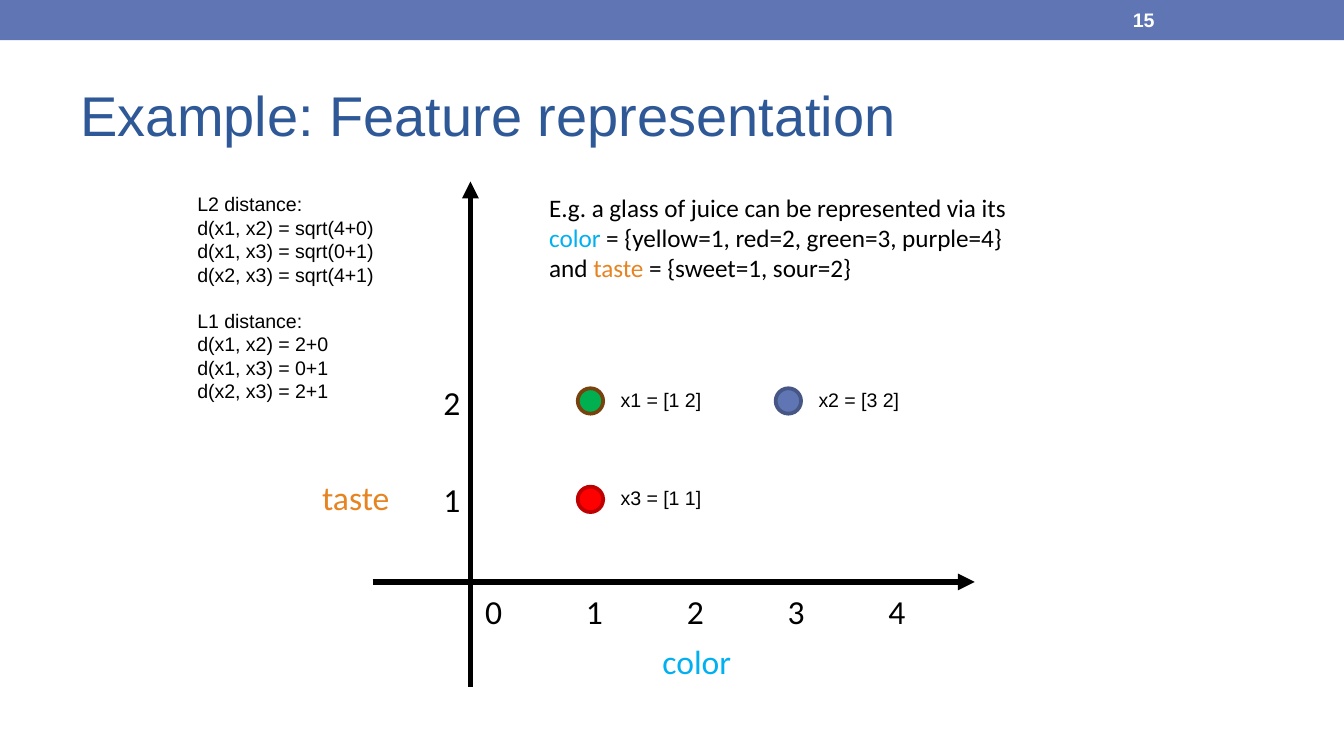
from lxml import etree
from pptx import Presentation
from pptx.dml.color import RGBColor
from pptx.enum.shapes import MSO_CONNECTOR, MSO_SHAPE
from pptx.enum.text import MSO_ANCHOR, PP_ALIGN
from pptx.oxml.ns import qn
from pptx.util import Cm, Pt

STRAIGHT = MSO_CONNECTOR.STRAIGHT
RECTANGLE, OVAL = MSO_SHAPE.RECTANGLE, MSO_SHAPE.OVAL
LEFT, TOP, MIDDLE = PP_ALIGN.LEFT, MSO_ANCHOR.TOP, MSO_ANCHOR.MIDDLE

THEME = {
    "ink": "000000", "bar": "6076B4", "title": "2F5897", "white": "FFFFFF",
    "color": "00B0F0", "taste": "E68422",
    "heading": {"name": "Arial", "size": Pt(30)},
    "axis": {"name": "Calibri", "size": Pt(18)},
    "body": {"name": "Calibri", "size": Pt(13.5)},
    "small": {"name": "Arial", "size": Pt(10.5)},
    "number": {"name": "Arial", "size": Pt(10.5), "bold": True},
}

# Content: a paragraph is a list of (text, colour key) runs
TITLE = "Example: Feature representation"
PAGE = "15"
INTRO = [
    ("E.g. a glass of juice can be represented via its ", "ink"),
    ("color", "color"),
    (" = {yellow=1, red=2, green=3, purple=4} and ", "ink"),
    ("taste", "taste"),
    (" = {sweet=1, sour=2}", "ink"),
]
DISTANCES = {
    "L2 distance:": ["d(x1, x2) = sqrt(4+0)", "d(x1, x3) = sqrt(0+1)",
                     "d(x2, x3) = sqrt(4+1)"],
    "L1 distance:": ["d(x1, x2) = 2+0", "d(x1, x3) = 0+1", "d(x2, x3) = 2+1"],
}
COLOR_TICKS = ["0", "1", "2", "3", "4"]
TASTE_TICKS = ["2", "1"]
SAMPLES = [  # name, color value, taste value, fill, outline
    ("x2", 3, 2, "6076B4", "475785"),
    ("x1", 1, 2, "00B050", "77420D"),
    ("x3", 1, 1, "FF0000", "C00000"),
]

# Geometry in centimetres
SLIDE_W, SLIDE_H = 25.4, 14.29
AXES = [(7.04, 11, 18.42, 11), (8.89, 12.98, 8.89, 3.43)]
FIRST_X, FIRST_Y = 11.16, 9.44
UNIT_X, UNIT_Y = 1.87, 1.86
DOT = 0.48
TICK_GAP = 1.905

prs = Presentation()
prs.slide_width, prs.slide_height = Cm(SLIDE_W), Cm(SLIDE_H)
slide = prs.slides.add_slide(prs.slide_layouts[5])


def rgb(value):
    return RGBColor.from_string(value)


def write(frame, paragraphs, style, anchor=TOP):
    frame.vertical_anchor = anchor
    for index, runs in enumerate(paragraphs):
        paragraph = frame.paragraphs[0] if index == 0 else frame.add_paragraph()
        paragraph.alignment = LEFT
        for text, color in runs:
            run = paragraph.add_run()
            run.text = text
            for key, value in THEME[style].items():
                setattr(run.font, key, value)
            run.font.color.rgb = rgb(THEME[color])


def add_text(box, paragraphs, style, wrap=False, anchor=TOP):
    frame = slide.shapes.add_textbox(*map(Cm, box)).text_frame
    frame.word_wrap = wrap
    write(frame, paragraphs, style, anchor)
    return frame


def add_filled(kind, box, fill):
    shape = slide.shapes.add_shape(kind, *map(Cm, box))
    shape.shadow.inherit = False
    shape.fill.solid()
    shape.fill.fore_color.rgb = rgb(fill)
    return shape


# Top bar with page number, and title
bar = add_filled(RECTANGLE, (0, 0, SLIDE_W, 0.76), THEME["bar"])
bar.line.fill.background()
add_text((21.16, 0.03, 2.97, 0.69), [[(PAGE, "white")]], "number", True, MIDDLE)

title = slide.shapes.title
title_box = {"left": 1.27, "top": 1.12, "width": 22.86, "height": 2.06}
for side, length in title_box.items():
    setattr(title, side, Cm(length))
write(title.text_frame, [[(TITLE, "title")]], "heading", MIDDLE)

# Axes with arrowheads
for ends in AXES:
    axis = slide.shapes.add_connector(STRAIGHT, *map(Cm, ends))
    axis.line.width = Pt(3)
    axis.line.color.rgb = rgb(THEME["ink"])
    etree.SubElement(axis.line._get_or_add_ln(), qn("a:tailEnd"), type="triangle")
    etree.SubElement(axis._element.spPr, qn("a:effectLst"))

# Color ticks on evenly spaced tab stops
color_ticks = add_text((8.92, 11.05, 8.53, 1.02),
                       [[("\t".join(COLOR_TICKS), "ink")]], "axis")
tabs = etree.SubElement(color_ticks.paragraphs[0]._p.get_or_add_pPr(), qn("a:tabLst"))
for step in range(1, len(COLOR_TICKS)):
    etree.SubElement(tabs, qn("a:tab"), pos=str(Cm(step * TICK_GAP)), algn="l")

# Taste ticks and axis names
taste_ticks = add_text((8.13, 7.09, 0.84, 2.9),
                       [[(tick, "ink")] for tick in TASTE_TICKS], "axis")
taste_ticks.paragraphs[1].space_before = Pt(30.5)
add_text((12.27, 11.99, 1.83, 1.02), [[("color", "color")]], "axis")
add_text((5.84, 8.89, 1.8, 1.02), [[("taste", "taste")]], "axis")

# Samples: dot and label placed by their feature values
for name, color_value, taste_value, fill, outline in SAMPLES:
    x = FIRST_X + (color_value - 1) * UNIT_X
    y = FIRST_Y - (taste_value - 1) * UNIT_Y
    dot = add_filled(OVAL, (x - DOT / 2, y - DOT / 2, DOT, DOT), fill)
    dot.line.color.rgb = rgb(outline)
    dot.line.width = Pt(2)
    label = f"{name} = [{color_value} {taste_value}]"
    add_text((x + 0.32, y - 0.37, 2.06, 0.71), [[(label, "ink")]], "small")

# Explanation and distance lists
add_text((10.13, 3.51, 9.53, 1.98), [INTRO], "body", True)
lines = [line for head, rows in DISTANCES.items() for line in (head, *rows)]
distances = add_text((3.48, 3.51, 3.91, 4.75), [[(line, "ink")] for line in lines], "small")
for line, paragraph in zip(lines[1:], distances.paragraphs[1:]):
    if line in DISTANCES:
        paragraph.space_before = Pt(12)

prs.save("out.pptx")
